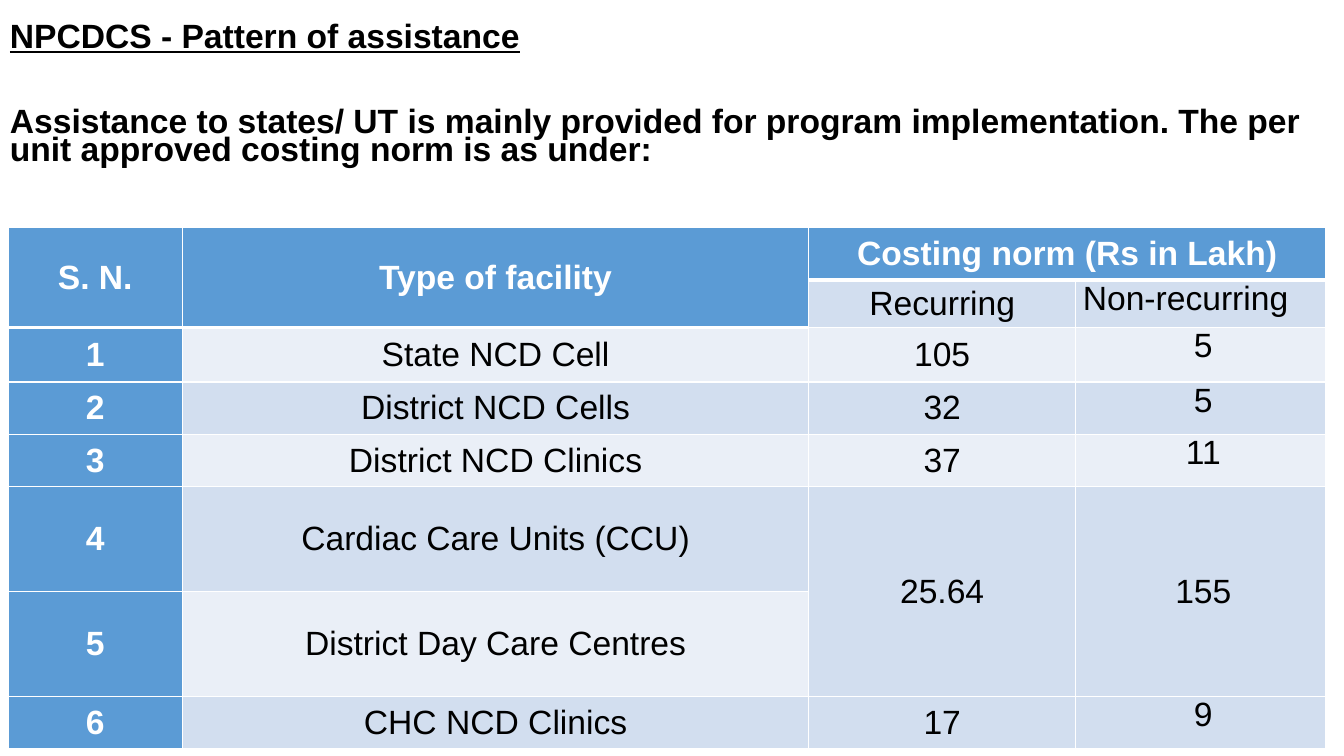
"""Build the slide on the pattern of assistance with its costing table."""
from typing import NamedTuple

from lxml.etree import SubElement
from pptx import Presentation
from pptx.dml.color import RGBColor
from pptx.enum.text import MSO_ANCHOR as Anchor, PP_ALIGN as Align
from pptx.oxml.ns import qn
from pptx.slide import Slide
from pptx.table import Table, _Cell as Cell
from pptx.util import Inches, Pt

BLUE, BAND_DARK, BAND_LIGHT = "5B9BD5", "D2DEEF", "EAEFF7"
WHITE, BLACK = "FFFFFF", "000000"
COLUMN_WIDTHS = [1.73, 6.21, 2.65, 2.48]
ROW_HEIGHTS = [0.52, 0.47, 0.54, 0.52, 0.52, 1.04, 1.04, 0.52]


class Heading(NamedTuple):
    text: str
    underline: bool
    space_before: float


class Span(NamedTuple):
    top: int
    left: int
    bottom: int
    right: int


HEADINGS = [
    Heading("NPCDCS - Pattern of assistance", True, 10),
    Heading("Assistance to states/ UT is mainly provided for program implementation. "
            "The per unit approved costing norm is as under:", False, 40.7),
]
ROWS = [
    ["S. N.", "Type of facility", "Costing norm (Rs in Lakh)", ""],
    ["", "", "Recurring", "Non-recurring"],
    ["1", "State NCD Cell", "105", "5"],
    ["2", "District NCD Cells", "32", "5"],
    ["3", "District NCD Clinics", "37", "11"],
    ["4", "Cardiac Care Units (CCU)", "25.64", "155"],
    ["5", "District Day Care Centres", "", ""],
    ["6", "CHC NCD Clinics", "17", "9"],
]
SPANS = [Span(0, 0, 1, 0), Span(0, 1, 1, 1), Span(0, 2, 0, 3),
         Span(5, 2, 6, 2), Span(5, 3, 6, 3)]


def color(value: str) -> RGBColor:
    return RGBColor.from_string(value)


def format_runs(paragraph, font_color: str, bold: bool, underline: bool = False) -> None:
    for run in paragraph.runs:
        run.font.name = "Arial"
        run.font.size = Pt(24)
        run.font.bold = bold
        run.font.underline = underline
        run.font.color.rgb = color(font_color)


def add_headings(slide: Slide) -> None:
    shape = slide.shapes.add_textbox(Inches(0), Inches(0.12), Inches(13.06), Inches(1.82))
    frame = shape.text_frame
    frame.text = "\n".join(heading.text for heading in HEADINGS)
    frame.word_wrap = True
    frame.vertical_anchor = Anchor.BOTTOM
    frame.margin_bottom = Inches(0.28)
    for paragraph, heading in zip(frame.paragraphs, HEADINGS):
        paragraph.line_spacing = 0.7
        paragraph.space_before = Pt(heading.space_before)
        format_runs(paragraph, BLACK, True, heading.underline)


def has_thick_bottom(row: int, column: int) -> bool:
    return row == 0 or (row == 1 and column < 2)


def set_borders(cell: Cell, row: int, column: int) -> None:
    properties = cell._tc.get_or_add_tcPr()
    top = 3 if row > 0 and has_thick_bottom(row - 1, column) else 1
    bottom = 3 if has_thick_bottom(row, column) else 1
    widths = {"lnL": 1, "lnR": 1, "lnT": top, "lnB": bottom}
    for index, (edge, width) in enumerate(widths.items()):
        line = SubElement(properties, qn(f"a:{edge}"), w=str(Pt(width)))
        fill = SubElement(line, qn("a:solidFill"))
        SubElement(fill, qn("a:srgbClr"), val=WHITE)
        properties.insert(index, line)


def format_cell(cell: Cell, row: int, column: int) -> None:
    is_header = row == 0 or column == 0 or (row == 1 and column == 1)
    band = BAND_DARK if row % 2 else BAND_LIGHT
    cell.fill.solid()
    cell.fill.fore_color.rgb = color(BLUE if is_header else band)
    cell.margin_left = cell.margin_right = Inches(0.07)
    cell.margin_top = cell.margin_bottom = 0
    is_top = column == 3 and row not in (0, 5)
    cell.vertical_anchor = Anchor.TOP if is_top else Anchor.MIDDLE
    paragraph = cell.text_frame.paragraphs[0]
    paragraph.alignment = Align.JUSTIFY if (row, column) == (1, 3) else Align.CENTER
    if column == 3 and row > 1:
        paragraph._p.get_or_add_pPr().set("marL", str(Inches(0.05)))
    format_runs(paragraph, WHITE if is_header else BLACK, is_header)
    set_borders(cell, row, column)


def fill_table(table: Table) -> None:
    for column, width in zip(table.columns, COLUMN_WIDTHS):
        column.width = Inches(width)
    for row, height in zip(table.rows, ROW_HEIGHTS):
        row.height = Inches(height)
    for row, texts in enumerate(ROWS):
        for column, text in enumerate(texts):
            cell = table.cell(row, column)
            cell.text_frame.text = text
            format_cell(cell, row, column)
    for span in SPANS:
        table.cell(span.top, span.left).merge(table.cell(span.bottom, span.right))


def main() -> None:
    presentation = Presentation()
    presentation.slide_width = Inches(13.33)
    presentation.slide_height = Inches(7.5)
    slide = presentation.slides.add_slide(presentation.slide_layouts[6])
    add_headings(slide)
    table_shape = slide.shapes.add_table(
        len(ROWS), len(COLUMN_WIDTHS), Inches(0.08), Inches(2.26),
        Inches(sum(COLUMN_WIDTHS)), Inches(sum(ROW_HEIGHTS)))
    fill_table(table_shape.table)
    presentation.save("out.pptx")


if __name__ == "__main__":
    main()
